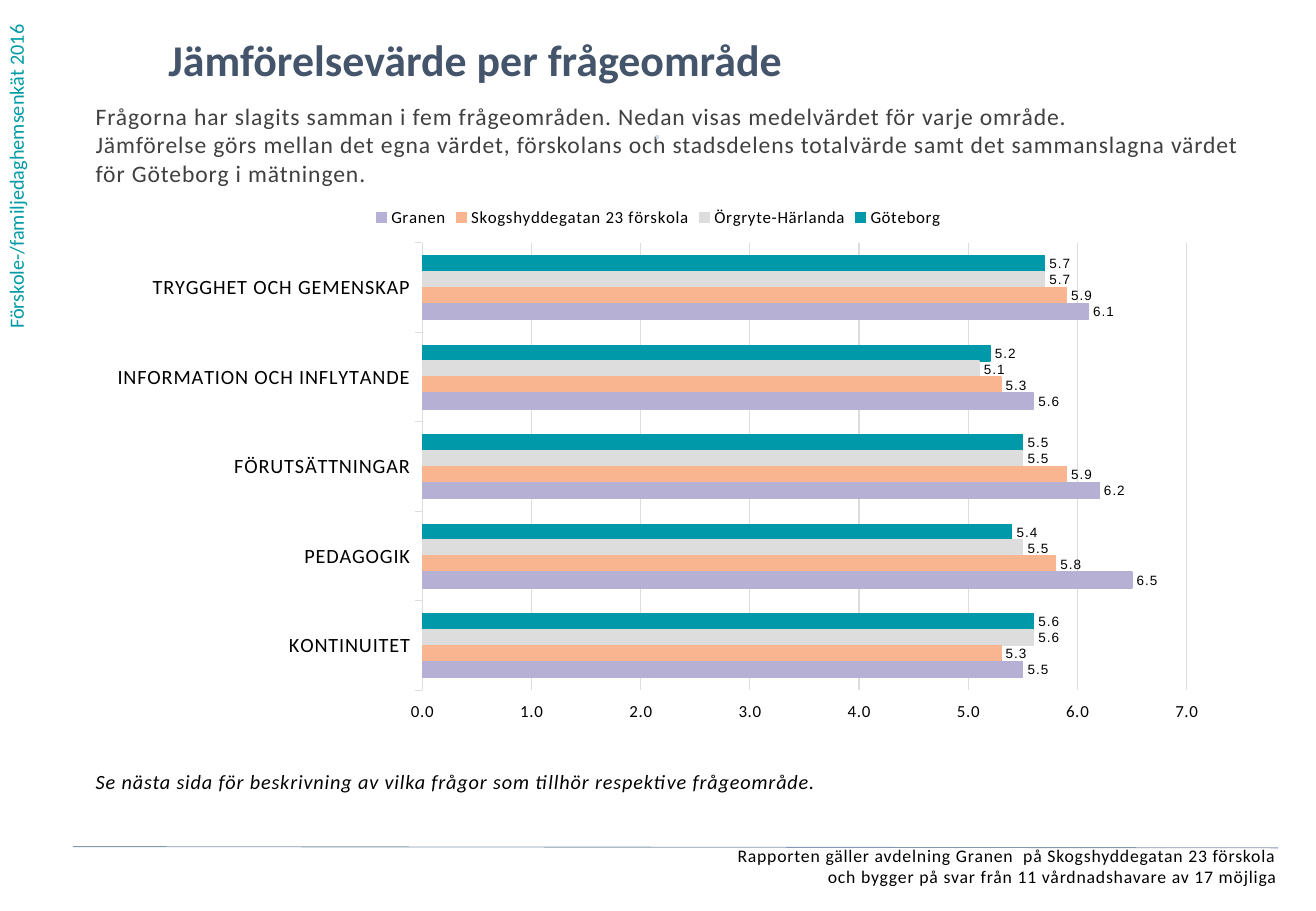
from lxml.etree import SubElement
from pptx import Presentation
from pptx.chart.data import CategoryChartData
from pptx.dml.color import RGBColor
from pptx.enum.chart import (XL_CHART_TYPE, XL_LABEL_POSITION, XL_LEGEND_POSITION,
                             XL_TICK_LABEL_POSITION, XL_TICK_MARK)
from pptx.enum.shapes import MSO_CONNECTOR
from pptx.enum.text import MSO_ANCHOR, PP_ALIGN
from pptx.oxml import parse_xml
from pptx.oxml.ns import nsdecls, qn
from pptx.util import Inches, Pt

SLIDE_WIDTH, SLIDE_HEIGHT = Inches(10.83), Inches(7.5)
TEXT_LEFT, TEXT_WIDTH = 7.27, 85.41
AREAS = ["TRYGGHET OCH GEMENSKAP", "INFORMATION OCH INFLYTANDE",
         "FÖRUTSÄTTNINGAR", "PEDAGOGIK", "KONTINUITET"]
SERIES = [
    ("Göteborg", "0099AA", (5.7, 5.2, 5.5, 5.4, 5.6)),
    ("Örgryte-Härlanda", "DDDDDD", (5.7, 5.1, 5.5, 5.5, 5.6)),
    ("Skogshyddegatan 23 förskola", "F9B590", (5.9, 5.3, 5.9, 5.8, 5.3)),
    ("Granen", "B6B1D4", (6.1, 5.6, 6.2, 6.5, 5.5)),
]
PLOT_AREA = {"x": 0.29, "y": 0.09, "w": 0.68, "h": 0.83}


def color(value):
    return RGBColor.from_string(value)


def grid(left, top, width, height):
    return (int(SLIDE_WIDTH * left / 100), int(SLIDE_HEIGHT * top / 100),
            int(SLIDE_WIDTH * width / 100), int(SLIDE_HEIGHT * height / 100))


def style_font(font, size, fill="000000", name="Calibri", bold=False, italic=False):
    font.name, font.size = name, Pt(size)
    font.bold, font.italic = bold, italic
    font.color.rgb = color(fill)


def style_line(line, fill, width=0.75):
    line.color.rgb = color(fill)
    line.width = Pt(width)


def fill_frame(frame, text, align=PP_ALIGN.LEFT, margin=0, **font):
    frame.word_wrap = True
    frame.vertical_anchor = MSO_ANCHOR.TOP
    frame.margin_left = frame.margin_right = Inches(margin)
    frame.margin_top = frame.margin_bottom = Inches(margin / 2)
    frame.text = text
    for para in frame.paragraphs:
        para.alignment = align
        for span in para.runs:
            style_font(span.font, **font)


def add_text(page, place, text, spacing=50, **options):
    box = page.shapes.add_textbox(*grid(*place))
    fill_frame(box.text_frame, text, **options)
    for properties in box.element.iter(qn("a:rPr")):
        properties.set("spc", str(spacing))
    return box


def set_title(page, place, text):
    title = page.shapes.title
    title.left, title.top, title.width, title.height = grid(*place)
    fill_frame(title.text_frame, text, size=26, fill="44546A", bold=True)


def add_rule(page, left, top, right, bottom):
    rule = page.shapes.add_connector(MSO_CONNECTOR.STRAIGHT, *grid(left, top, right, bottom))
    style_line(rule.line, "8497B0", 0.5)
    SubElement(rule.element.spPr, qn("a:effectLst"))


def place_plot(chart):
    plot_area = chart.element.find(".//" + qn("c:plotArea"))
    for layout in plot_area.findall(qn("c:layout")):
        plot_area.remove(layout)
    sizes = "".join(f'<c:{key} val="{value}"/>' for key, value in PLOT_AREA.items())
    plot_area.insert(0, parse_xml(
        f'<c:layout {nsdecls("c")}><c:manualLayout><c:layoutTarget val="inner"/>'
        f'<c:xMode val="edge"/><c:yMode val="edge"/>{sizes}</c:manualLayout></c:layout>'))


def style_axes(chart):
    areas, values = chart.category_axis, chart.value_axis
    areas.reverse_order = True
    areas.has_major_gridlines = False
    style_font(areas.tick_labels.font, 12)
    style_line(areas.format.line, "DDDDDD")
    values.minimum_scale, values.maximum_scale, values.major_unit = 0, 7, 1
    values.tick_label_position = XL_TICK_LABEL_POSITION.HIGH
    style_line(values.major_gridlines.format.line, "DDDDDD")
    values.format.line.fill.background()
    style_font(values.tick_labels.font, 10)
    values.tick_labels.number_format = "0.0;0.0"
    values.tick_labels.number_format_is_linked = False
    for axis in (areas, values):
        axis.major_tick_mark = XL_TICK_MARK.OUTSIDE
        axis.minor_tick_mark = XL_TICK_MARK.NONE


def style_series(series, fill):
    series.format.fill.solid()
    series.format.fill.fore_color.rgb = color(fill)
    style_line(series.format.line, fill)
    labels = series.data_labels
    labels.show_value = True
    labels.number_format = "0.0;0.0"
    labels.number_format_is_linked = False
    labels.position = XL_LABEL_POSITION.OUTSIDE_END
    style_font(labels.font, 8, name="Arial")


def add_comparison(page, place):
    data = CategoryChartData(number_format="0.0")
    data.categories = AREAS
    for name, _, values in SERIES:
        data.add_series(name, values)
    chart = page.shapes.add_chart(XL_CHART_TYPE.BAR_CLUSTERED, *grid(*place), data).chart
    chart.has_title = False
    style_font(chart.font, 10)
    chart.has_legend = True
    chart.legend.position = XL_LEGEND_POSITION.TOP
    chart.legend.include_in_layout = False
    style_font(chart.legend.font, 10)
    plot = chart.plots[0]
    plot.gap_width, plot.overlap = 162, 0
    plot.vary_by_categories = False
    for series, (_, fill, _) in zip(plot.series, SERIES):
        style_series(series, fill)
    style_axes(chart)
    place_plot(chart)
    for properties in chart.element.iter(qn("a:defRPr")):
        properties.set("spc", "50")


def main():
    deck = Presentation()
    deck.slide_width, deck.slide_height = SLIDE_WIDTH, SLIDE_HEIGHT
    page = deck.slides.add_slide(deck.slide_layouts[5])
    survey = add_text(page, (-0.18, 0, 3.69, 37.4), "Förskole-/familjedaghemsenkät 2016",
                      spacing=0, margin=0.1, size=12, fill="009BA4")
    survey.element.txBody.bodyPr.set("vert", "vert270")
    set_title(page, (12.8, 3.6, 77, 7.6), "Jämförelsevärde per frågeområde")
    add_text(page, (TEXT_LEFT, 11.2, 87.35, 13.47),
             "Frågorna har slagits samman i fem frågeområden. "
             "Nedan visas medelvärdet för varje område.\v"
             "Jämförelse görs mellan det egna värdet, förskolans och stadsdelens "
             "totalvärde samt det sammanslagna värdet för Göteborg i mätningen.",
             size=14, fill="404040")
    add_text(page, (1.11, 92.7, 95.95, 5.73),
             "Rapporten gäller avdelning Granen  på Skogshyddegatan 23 förskola\v"
             "och bygger på svar från 11 vårdnadshavare av 17 möjliga",
             align=PP_ALIGN.RIGHT, size=10.5)
    add_text(page, (35.73, 13.6, 28.44, 5.2), "⋅",
             align=PP_ALIGN.CENTER, size=12, fill="D2D9E2", bold=True)
    add_text(page, (TEXT_LEFT, 84.43, TEXT_WIDTH, 4),
             "Se nästa sida för beskrivning av vilka frågor som tillhör "
             "respektive frågeområde.", size=12, italic=True)
    add_comparison(page, (7.32, 21.33, TEXT_WIDTH, 59.2))
    add_rule(page, 5.54, 92.93, 97.14, 93.07)
    deck.save("out.pptx")


if __name__ == "__main__":
    main()
